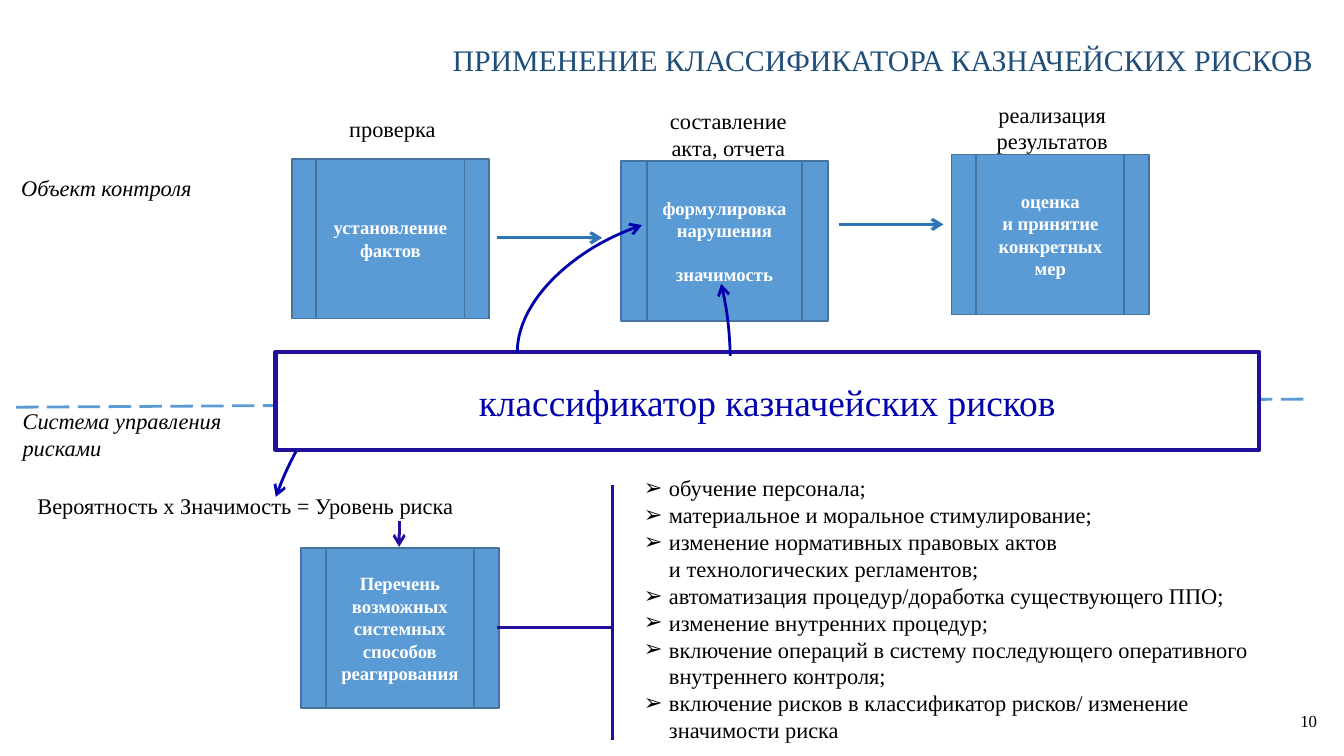
from lxml.etree import SubElement
from pptx import Presentation
from pptx.dml.color import RGBColor
from pptx.enum.dml import MSO_LINE
from pptx.enum.shapes import MSO_CONNECTOR, MSO_SHAPE
from pptx.enum.text import MSO_ANCHOR, MSO_AUTO_SIZE, PP_ALIGN
from pptx.oxml.ns import qn
from pptx.util import Pt

FONT = "Times New Roman"
BLACK = RGBColor(0x00, 0x00, 0x00)
WHITE = RGBColor(0xFF, 0xFF, 0xFF)
TITLE_BLUE = RGBColor(0x1F, 0x4E, 0x79)
BOX_BLUE = RGBColor(0x5B, 0x9B, 0xD5)
BOX_EDGE = RGBColor(0x43, 0x73, 0x9E)
FLOW_BLUE = RGBColor(0x2E, 0x75, 0xB6)
INDIGO = RGBColor(0x21, 0x10, 0x9C)
DEEP_BLUE = RGBColor(0x00, 0x00, 0xAC)

TITLE = "ПРИМЕНЕНИЕ КЛАССИФИКАТОРА КАЗНАЧЕЙСКИХ РИСКОВ"
CLASSIFIER = "классификатор казначейских рисков"
PAGE_NUMBER = "10"

# Positions are (left, top, width, height) in points.
PROCESSES = [
    ((156.24, 84.96, 105.84, 85.68), ["установление фактов"], 0),
    ((332.64, 86.4, 110.88, 85.68), ["формулировка нарушения", "значимость"], 11.5),
    ((509.76, 82.8, 105.84, 85.68), ["оценка", "и принятие конкретных мер"], 0),
    ((161.28, 293.76, 105.84, 85.68),
     ["Перечень возможных системных способов реагирования"], 0),
]
STAGES = [
    ((169.2, 58.32, 82, 22), "проверка"),
    ((349.2, 54, 82, 36), "составление акта, отчета"),
    ((522.72, 50.4, 82, 36), "реализация результатов"),
]
LEVELS = [
    ((4.32, 90, 168.5, 22), ["Объект контроля"]),
    ((5.04, 214.56, 168.5, 36), ["Система управления", "рисками"]),
]
FORMULA = ((12.96, 259.92, 238.3, 22), "Вероятность х Значимость = Уровень риска")
RESPONSES = [
    "обучение персонала;",
    "материальное и моральное стимулирование;",
    "изменение нормативных правовых актов\vи технологических регламентов;",
    "автоматизация процедур/доработка существующего ППО;",
    "изменение внутренних процедур;",
    "включение операций в систему последующего оперативного внутреннего контроля;",
    "включение рисков в классификатор рисков/ изменение значимости риска",
]
# Start, end, colour, width, arrow at the end
LINES = [
    ((266.4, 127.44), (322.56, 127.44), FLOW_BLUE, 1.75, True),
    ((449.28, 120.24), (505.44, 120.24), FLOW_BLUE, 1.75, True),
    ((328.32, 259.92), (328.32, 396.72), INDIGO, 1.75, False),
    ((266.4, 336.24), (328.32, 336.24), INDIGO, 1.75, False),
    ((213.84, 279.36), (213.84, 293.04), INDIGO, 1.5, True),
]
# Position, rotation, arc adjustments, end with the arrow
ARCS = [
    ((306.72, 85.68, 104.4, 169.92), 249.8, (166.48, 2.11), "tailEnd"),
    ((318.96, 101.52, 72, 167.04), 356.4, (190.32, 7.49), "headEnd"),
    ((154.08, 175.68, 72, 167.04), 207.8, (193.73, 0.93), "headEnd"),
]


def place(shape, position):
    shape.left, shape.top, shape.width, shape.height = map(Pt, position)


def write(shape, texts, size, color=BLACK, align=PP_ALIGN.LEFT,
          anchor=MSO_ANCHOR.TOP, bold=False, italic=False, gap=0, bullet=None):
    frame = shape.text_frame
    frame.word_wrap = True
    frame.auto_size = MSO_AUTO_SIZE.NONE
    frame.vertical_anchor = anchor
    frame.text = "\n".join(texts)
    for index, paragraph in enumerate(frame.paragraphs):
        paragraph.alignment = align
        paragraph.space_before = Pt(gap if index else 0)
        if bullet:
            properties = paragraph._p.get_or_add_pPr()
            properties.set("marL", str(Pt(13.5)))
            properties.set("indent", str(Pt(-13.5)))
            SubElement(properties, qn("a:buFont"), typeface="Arial")
            SubElement(properties, qn("a:buChar"), char=bullet)
        font = paragraph.font
        font.name, font.size = FONT, Pt(size)
        font.bold, font.italic = bold, italic
        font.color.rgb = color


def add_label(shapes, position, texts, size=12, **style):
    label = shapes.add_textbox(*map(Pt, position))
    write(label, texts, size, **style)
    return label


def add_box(shapes, preset, position, fill, edge, edge_width):
    box = shapes.add_shape(preset, *map(Pt, position))
    box.shadow.inherit = False
    box.fill.solid()
    box.fill.fore_color.rgb = fill
    box.line.color.rgb = edge
    box.line.width = Pt(edge_width)
    return box


def add_arrowhead(line, end):
    SubElement(line._get_or_add_ln(), qn(f"a:{end}"), type="arrow")


def add_line(shapes, start, end, color, width, arrow=False):
    connector = shapes.add_connector(MSO_CONNECTOR.STRAIGHT, *map(Pt, start + end))
    connector.line.color.rgb = color
    connector.line.width = Pt(width)
    if arrow:
        add_arrowhead(connector.line, "tailEnd")
    SubElement(connector._element.spPr, qn("a:effectLst"))
    return connector


def add_arc(shapes, position, rotation, adjustments, arrow_end):
    arc = shapes.add_shape(MSO_SHAPE.ARC, *map(Pt, position))
    arc.shadow.inherit = False
    arc.rotation = rotation
    for index, value in enumerate(adjustments):
        arc.adjustments[index] = value
    arc.fill.background()
    arc.line.color.rgb = DEEP_BLUE
    arc.line.width = Pt(1.5)
    add_arrowhead(arc.line, arrow_end)


def main():
    presentation = Presentation()
    presentation.slide_width, presentation.slide_height = Pt(720), Pt(405)
    slide = presentation.slides.add_slide(presentation.slide_layouts[1])
    shapes = slide.shapes
    centred = {"align": PP_ALIGN.CENTER, "anchor": MSO_ANCHOR.MIDDLE}

    place(shapes.title, (226.08, 18.72, 493.92, 44.64))
    write(shapes.title, [TITLE], 16, TITLE_BLUE, PP_ALIGN.CENTER)
    responses = slide.placeholders[1]
    place(responses, (337.68, 250.56, 367.92, 152.64))
    write(responses, RESPONSES, 12, bullet="➢")

    divider = add_line(shapes, (8.64, 218.16), (698.4, 213.84), BOX_BLUE, 1.5)
    divider.line.dash_style = MSO_LINE.LONG_DASH
    for position, texts in LEVELS:
        add_label(shapes, position, texts, italic=True)
    for position, text in STAGES:
        add_label(shapes, position, [text], align=PP_ALIGN.CENTER)
    add_label(shapes, FORMULA[0], [FORMULA[1]])

    for position, texts, gap in PROCESSES:
        box = add_box(shapes, MSO_SHAPE.FLOWCHART_PREDEFINED_PROCESS, position,
                      BOX_BLUE, BOX_EDGE, 1)
        write(box, texts, 10, WHITE, bold=True, gap=gap, **centred)
    classifier = add_box(shapes, MSO_SHAPE.RECTANGLE, (147.6, 188.64, 527.04, 52.56),
                         WHITE, INDIGO, 2.25)
    write(classifier, [CLASSIFIER], 20, DEEP_BLUE, **centred)

    for line in LINES:
        add_line(shapes, *line)
    for arc in ARCS:
        add_arc(shapes, *arc)

    number = add_label(shapes, (686.88, 375.12, 23.76, 21.6), [PAGE_NUMBER], 9,
                       align=PP_ALIGN.RIGHT, anchor=MSO_ANCHOR.MIDDLE)
    frame = number.text_frame
    frame.margin_left = frame.margin_right = Pt(5)
    frame.margin_top = frame.margin_bottom = Pt(3)
    presentation.save("out.pptx")


if __name__ == "__main__":
    main()
